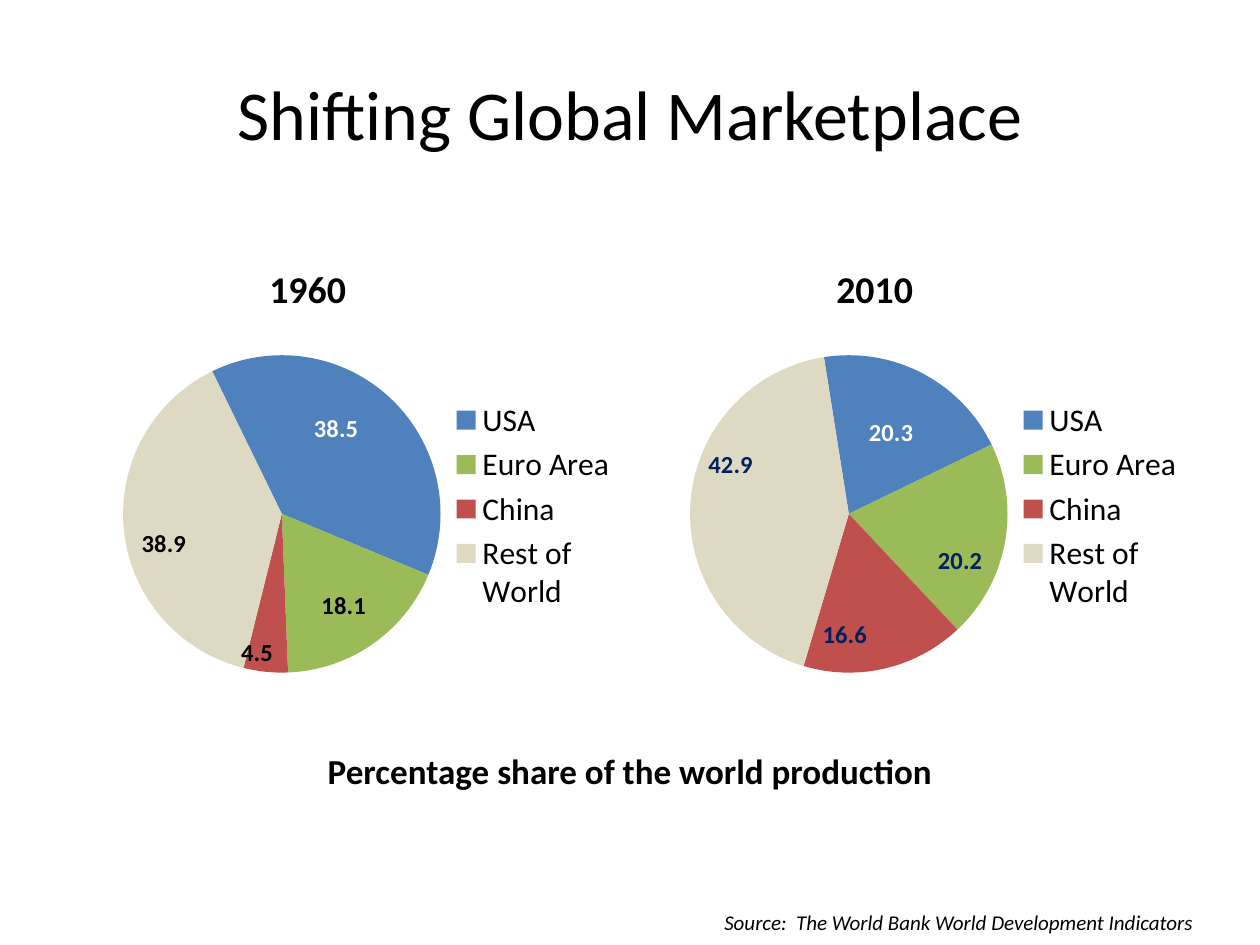
from lxml.etree import SubElement
from pptx import Presentation
from pptx.chart.data import CategoryChartData
from pptx.dml.color import RGBColor
from pptx.enum.chart import XL_CHART_TYPE, XL_LABEL_POSITION, XL_LEGEND_POSITION
from pptx.enum.text import MSO_ANCHOR, PP_ALIGN
from pptx.oxml.ns import qn
from pptx.util import Inches, Pt

CATEGORIES = ["USA", "Euro Area", "China", "Rest of World"]
SLICE_COLORS = ["4F81BD", "9BBB59", "C0504D", "DDD9C3"]


def rgb(value):
    """Turn a hex string into a colour."""
    return RGBColor.from_string(value)


def set_font(font, size, color="000000", bold=False, italic=False):
    """Format a font."""
    font.name = "Calibri"
    font.size = Pt(size)
    font.color.rgb = rgb(color)
    font.bold = bold
    font.italic = italic


def write_text(sp, text, align=PP_ALIGN.CENTER, anchor=MSO_ANCHOR.MIDDLE,
               wrap=True, **style):
    """Write one formatted paragraph without a bullet."""
    tf = sp.text_frame
    tf.word_wrap = wrap
    tf.vertical_anchor = anchor
    p = tf.paragraphs[0]
    pPr = p._p.get_or_add_pPr()
    pPr.set("marL", "0")
    pPr.set("indent", "0")
    SubElement(pPr, qn("a:buNone"))
    p.alignment = align
    p.space_before = Pt(0)
    r = p.add_run()
    r.text = text
    set_font(r.font, **style)


def place(sp, box):
    """Move a shape to a box given in inches."""
    sp.left, sp.top, sp.width, sp.height = map(Inches, box)


def set_layout(layout, **values):
    """Give a chart part a manual layout."""
    for old in list(layout):
        layout.remove(old)
    manual = SubElement(layout, qn("c:manualLayout"))
    for name, value in values.items():
        SubElement(manual, qn(f"c:{name}")).set("val", str(value))


def add_layout_after(element):
    """Insert an empty layout behind a chart element."""
    layout = SubElement(element.getparent(), qn("c:layout"))
    element.addnext(layout)
    return layout


def format_slice(point, color, label_color, offset):
    """Colour a slice and shift its label from the slice centre."""
    point.format.fill.solid()
    point.format.fill.fore_color.rgb = rgb(color)
    label = point.data_label
    set_font(label.font, 14, label_color, bold=True)
    label.position = XL_LABEL_POSITION.CENTER
    idx = label._get_or_add_dLbl().find(qn("c:idx"))
    set_layout(add_layout_after(idx), x=offset[0], y=offset[1])


def add_pie(slide, box, year, values, start, plot_box, label_color, offsets):
    """Add the pie of one year with its title and legend."""
    data = CategoryChartData()
    data.categories = CATEGORIES
    data.add_series(year, values)
    chart = slide.shapes.add_chart(
        XL_CHART_TYPE.PIE, *map(Inches, box), data).chart
    set_font(chart.font, 18)

    chart.has_title = True
    tf = chart.chart_title.text_frame
    tf.text = year
    set_font(tf.paragraphs[0].runs[0].font, 21.6, bold=True)
    title = chart.chart_title._element
    for old in title.findall(qn("c:layout")):
        title.remove(old)
    set_layout(add_layout_after(title.find(qn("c:tx"))),
               xMode="edge", yMode="edge", x=0.34, y=0.04)

    chart.has_legend = True
    chart.legend.position = XL_LEGEND_POSITION.RIGHT
    chart.legend.include_in_layout = False

    plot = chart.plots[0]
    plot.vary_by_categories = True
    pie = plot._element
    angle = pie.find(qn("c:firstSliceAng"))
    if angle is None:
        angle = SubElement(pie, qn("c:firstSliceAng"))
    angle.set("val", str(start))
    area = pie.getparent()
    layout = area.find(qn("c:layout"))
    if layout is None:
        layout = SubElement(area, qn("c:layout"))
        area.insert(0, layout)
    x, y, w, h = plot_box
    set_layout(layout, layoutTarget="inner", xMode="edge", yMode="edge",
               x=x, y=y, w=w, h=h)

    label_colors = ["FFFFFF"] + [label_color] * 3
    for i, style in enumerate(zip(SLICE_COLORS, label_colors, offsets)):
        format_slice(plot.series[0].points[i], *style)


def add_source(slide, box):
    """Add the source line."""
    sp = slide.shapes.add_textbox(*map(Inches, box))
    write_text(sp, "Source:  The World Bank World Development Indicators",
               align=PP_ALIGN.LEFT, anchor=MSO_ANCHOR.TOP, wrap=False,
               size=12, italic=True)


def main():
    """Build the slide."""
    prs = Presentation()
    prs.slide_width, prs.slide_height = Inches(10), Inches(7.5)
    slide = prs.slides.add_slide(prs.slide_layouts[1])
    title, body = slide.placeholders
    place(title, (0.5, 0.33, 9, 1.13))
    write_text(title, "Shifting Global Marketplace", size=40)
    place(body, (1, 5.8, 8, 0.53))
    write_text(body, "Percentage share of the world production",
               anchor=MSO_ANCHOR.BOTTOM, size=20, bold=True)
    add_pie(slide, (0.58, 1.85, 4.42, 4.33), "1960", [38.5, 18.1, 4.5, 38.9],
            334, (0.09, 0.21, 0.57, 0.61), "000000",
            [(0, -0.05), (0.03, 0.05), (-0.03, 0.11), (-0.07, 0.04)])
    add_pie(slide, (5.08, 1.85, 4.42, 4.33), "2010", [20.3, 20.2, 16.6, 42.9],
            351, (0.09, 0.21, 0.57, 0.61), "002060",
            [(0.01, -0.02), (0.06, 0.06), (-0.04, 0.08), (-0.07, -0.08)])
    add_source(slide, (5.65, 7.17, 3.96, 0.3))
    prs.save("out.pptx")


if __name__ == "__main__":
    main()
